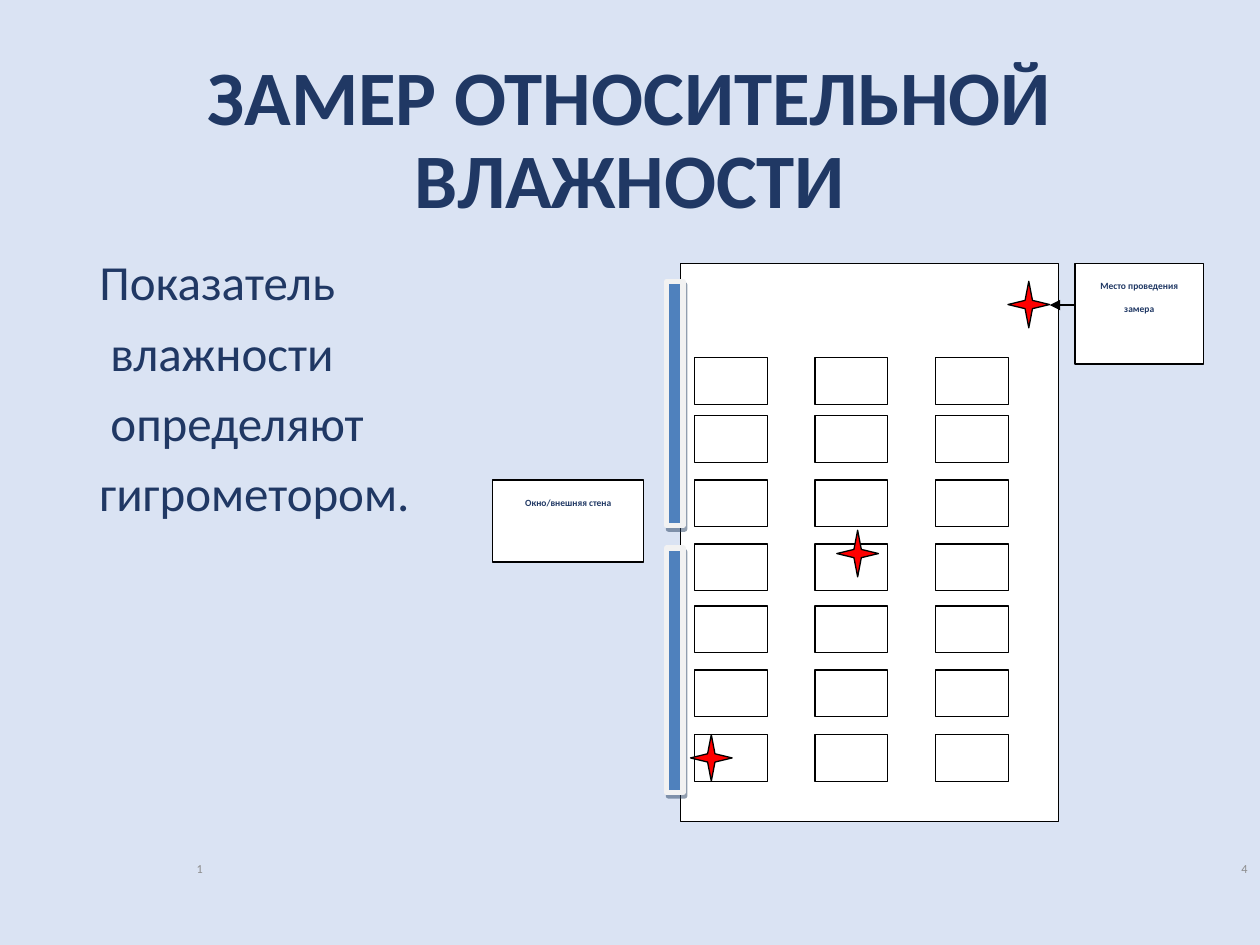
from lxml.etree import SubElement
from pptx import Presentation
from pptx.dml.color import RGBColor
from pptx.enum.shapes import MSO_CONNECTOR as Connector, MSO_SHAPE as Shape
from pptx.enum.text import MSO_ANCHOR as Anchor, MSO_AUTO_SIZE as AutoSize, PP_ALIGN as Align
from pptx.oxml.ns import qn
from pptx.util import Cm, Pt

COLORS = {
    "background": "DAE3F3",
    "text": "203864",
    "number": "8C8C8C",
    "white": "FFFFFF",
    "black": "000000",
    "window": "4F81BD",
    "frame": "F2F2F2",
    "shadow": "243F60",
    "star": "FF0000",
}
ROW_TOPS = (1.9, 3.07, 4.37, 5.66, 6.91, 8.2, 9.5)
STARS = ((0.2, 9.5), (3.15, 5.38), (6.6, 0.36))


def color(name):
    return RGBColor.from_string(COLORS[name])


def lengths(box):
    return [Cm(value) for value in box]


def place(shape, box):
    shape.left, shape.top, shape.width, shape.height = lengths(box)


def format_font(paragraph, size, name="text", bold=False):
    font = paragraph.font
    font.name, font.size, font.bold = "Calibri", Pt(size), bold
    font.color.rgb = color(name)


def add_figure(slide, kind, box, fill="white", line="black", width=0.75):
    shape = slide.shapes.add_shape(kind, *lengths(box))
    shape.shadow.inherit = False
    shape.fill.solid()
    shape.fill.fore_color.rgb = color(fill)
    shape.line.color.rgb = color(line)
    shape.line.width = Pt(width)
    return shape


def add_title(slide, box, text):
    title = slide.shapes.title
    place(title, box)
    frame = title.text_frame
    frame.text = text
    frame.auto_size = AutoSize.NONE
    frame.vertical_anchor = Anchor.MIDDLE
    paragraph = frame.paragraphs[0]
    paragraph.alignment = Align.CENTER
    paragraph.line_spacing = 0.9
    format_font(paragraph, 44, bold=True)


def add_body(slide, box, lines):
    body = slide.placeholders[1]
    place(body, box)
    frame = body.text_frame
    frame.text = "\n".join(lines)
    frame.auto_size = AutoSize.NONE
    for paragraph in frame.paragraphs:
        paragraph.line_spacing = 0.9
        paragraph.space_before = Pt(10)
        format_font(paragraph, 28)
        properties = paragraph._p.get_or_add_pPr()
        properties.set("marL", str(Cm(0.63)))
        properties.set("indent", str(-Cm(0.63)))
        properties.insert_element_before(
            properties.makeelement(qn("a:buNone")), "a:tabLst", "a:defRPr", "a:extLst")


def add_number(slide, box, text, alignment):
    frame = slide.shapes.add_textbox(*lengths(box)).text_frame
    frame.word_wrap = True
    frame.vertical_anchor = Anchor.MIDDLE
    frame.text = text
    paragraph = frame.paragraphs[0]
    paragraph.alignment = alignment
    format_font(paragraph, 7, "number")


def add_window(slide, box):
    window = add_figure(slide, Shape.RECTANGLE, box, "window", "frame", 3)
    effects = window._element.spPr.find(qn("a:effectLst"))
    shadow = SubElement(effects, qn("a:outerShdw"), dist=str(Pt(2.2)),
                        dir=str(63 * 60000), algn="ctr", rotWithShape="0")
    tint = SubElement(shadow, qn("a:srgbClr"), val=COLORS["shadow"])
    SubElement(tint, qn("a:alpha"), val="50000")


def add_room(slide, box):
    left, top = box[:2]
    add_figure(slide, Shape.RECTANGLE, box)
    for column in range(3):
        for row_top in ROW_TOPS:
            add_figure(slide, Shape.RECTANGLE,
                       (left + 0.28 + 2.43 * column, top + row_top, 1.47, 0.94))
    for offset in (0.36, 5.74):
        add_window(slide, (left - 0.28, top + offset, 0.33, 4.93))
    for x, y in STARS:
        star = add_figure(slide, Shape.STAR_4_POINT, (left + x, top + y, 0.84, 0.94), "star")
        star.adjustments[0] = 0.125


def add_label(slide, box, text):
    frame = add_figure(slide, Shape.RECTANGLE, box).text_frame
    frame.word_wrap = True
    frame.vertical_anchor = Anchor.TOP
    frame.margin_left = frame.margin_right = Cm(0.23)
    frame.margin_top = frame.margin_bottom = Cm(0.13)
    frame.text = text
    paragraph = frame.paragraphs[0]
    paragraph.alignment = Align.CENTER
    paragraph.line_spacing = Pt(12.6)
    format_font(paragraph, 5.4, bold=True)


def add_arrow(slide, start, end):
    arrow = slide.shapes.add_connector(Connector.STRAIGHT, *lengths(start + end))
    arrow.line.color.rgb = color("black")
    arrow.line.width = Pt(0.75)
    SubElement(arrow.line._get_or_add_ln(), qn("a:tailEnd"), type="triangle")
    SubElement(arrow._element.spPr, qn("a:effectLst"))


def main():
    presentation = Presentation()
    presentation.slide_width, presentation.slide_height = Cm(25.4), Cm(19.05)
    slide = presentation.slides.add_slide(presentation.slide_layouts[1])
    slide.background.fill.solid()
    slide.background.fill.fore_color.rgb = color("background")

    add_title(slide, (1.75, 1.02, 21.9, 3.68), "ЗАМЕР ОТНОСИТЕЛЬНОЙ ВЛАЖНОСТИ")
    add_body(slide, (1.75, 5.08, 21.9, 12.09),
             ("Показатель", " влажности", " определяют", "гигрометором."))
    add_number(slide, (0, 17.04, 8.05, 0.94), "1", Align.CENTER)
    add_number(slide, (19.48, 17.04, 5.92, 0.94), "4", Align.RIGHT)
    add_room(slide, (13.72, 5.31, 7.62, 11.25))
    add_label(slide, (9.93, 9.68, 3.05, 1.65), "Окно/внешняя стена")
    add_label(slide, (21.67, 5.31, 2.59, 2.03), "Место проведения замера")
    add_arrow(slide, (21.67, 6.15), (21.16, 6.15))
    presentation.save("out.pptx")


if __name__ == "__main__":
    main()
